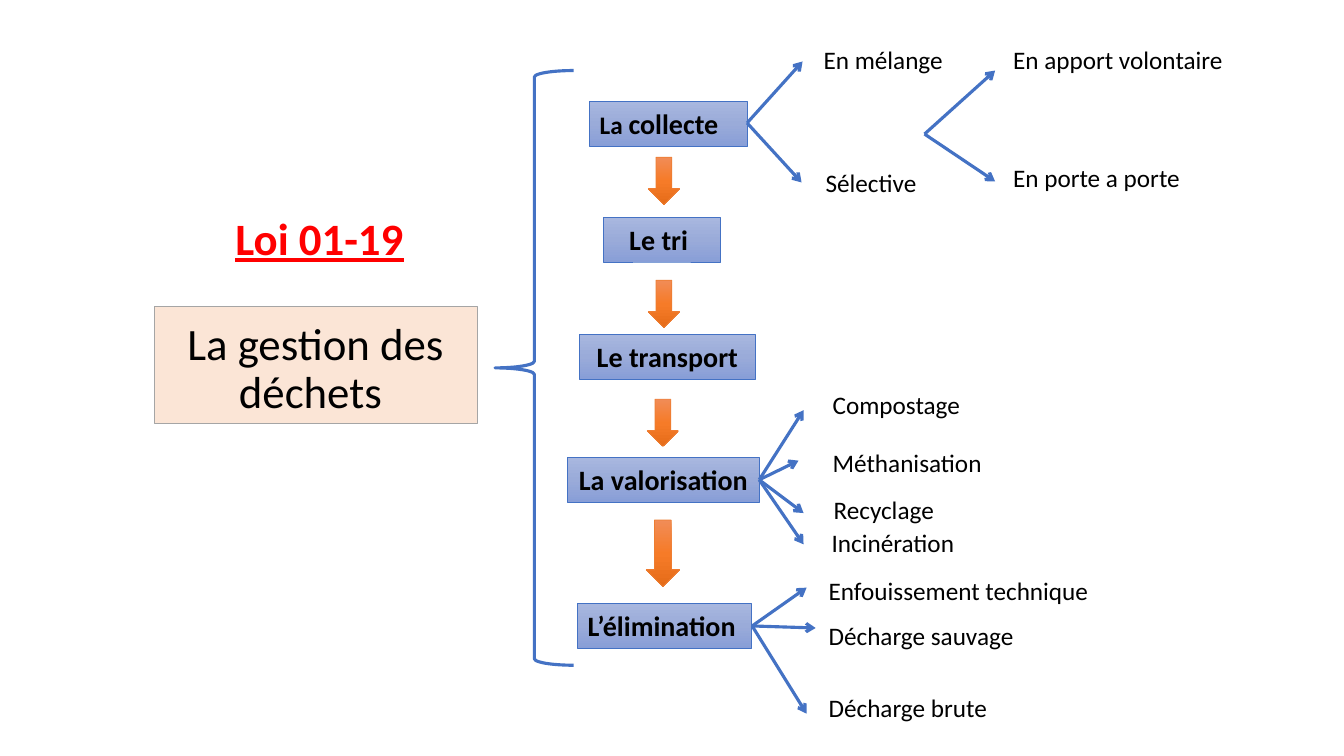
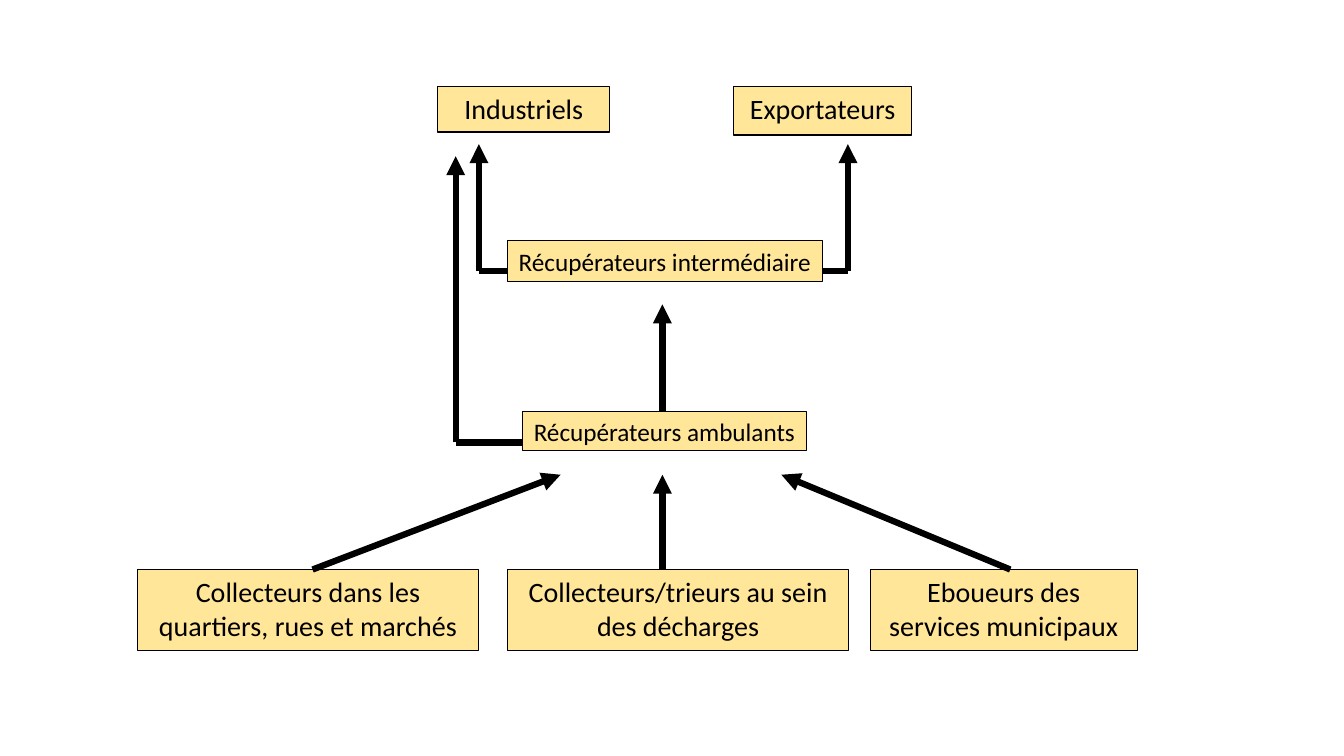
from copy import deepcopy
from lxml import etree
from pptx import Presentation
from pptx import util as u
from pptx.dml.color import RGBColor
from pptx.enum import shapes, text
from pptx.oxml.ns import qn

PX = 9144
FONT = "Calibri"
HUES = {"ink": "000000", "red": "FF0000", "peach": "FBE5D6", "gray": "A5A5A5",
        "blue": "4472C4", "orange": "ED7D31", "sand": "FFE699"}
FADES = {"blue": ("A8B7DF", "9AABD9", "889ED7"),
         "orange": ("F18C57", "F67B28", "E56C19")}
KIND = shapes.MSO_SHAPE
LEFT, MID = text.PP_ALIGN.LEFT, text.PP_ALIGN.CENTER

TITLE = ("La gestion des déchets ", (153, 304, 320, 116))
LAW = ("Loi 01-19", (157, 204, 320, 64))
BRACE = (491, 70, 78, 590)
STAGES = [
    ([("La ", 18), ("collecte", 20)], (585, 101, 156, 44), LEFT),
    ([("Le tri ", 20)], (598, 216, 117, 44), MID),
    ([("Le transport", 20)], (575, 332, 174, 44), MID),
    ([("La valorisation ", 20)], (563, 454, 190, 44), MID),
    ([("L’élimination", 20)], (573, 599, 172, 44), LEFT),
]
STEPS = [(643, 156, 31, 47), (643, 278, 31, 47), (642, 396, 31, 47), (641, 516, 33, 66)]
FANS = [
    ((741, 122), [("En mélange", (807, 39), (796, 61)),
                  ("Sélective", (809, 161), (795, 181))]),
    ((917, 133), [("En apport volontaire", (995, 39), (987, 70)),
                  ("En porte a porte", (995, 156), (987, 180))]),
    ((753, 476), [("Compostage", (816, 381), (797, 407)),
                  ("Méthanisation", (816, 439), (792, 457)),
                  ("Recyclage", (817, 486), (797, 509)),
                  ("Incinération", (815, 518), (797, 540))]),
    ((746, 621), [("Enfouissement technique", (812, 566), (800, 583)),
                  ("Décharge sauvage", (812, 611), (809, 623)),
                  ("Décharge brute", (812, 682), (800, 708))]),
]

ACTORS = [
    ("Industriels", 20, (434, 86, 171, 45)),
    ("Exportateurs", 20, (728, 86, 176, 48)),
    ("Récupérateurs intermédiaire", 18, (503, 239, 313, 40)),
    ("Récupérateurs ambulants", 18, (518, 408, 282, 39)),
    ("Collecteurs dans les quartiers, rues et marchés", 20, (136, 565, 339, 80)),
    ("Collecteurs/trieurs au sein des décharges", 20, (503, 565, 339, 80)),
    ("Eboueurs des services municipaux", 20, (863, 565, 265, 80)),
]
ROUTES = [
    [(503, 269), (475, 269), (475, 143)],
    [(815, 269), (841, 269), (841, 143)],
    [(518, 439), (452, 439), (452, 155)],
    [(657, 408), (657, 302)],
    [(310, 565), (556, 471)],
    [(657, 565), (657, 471)],
    [(1002, 565), (775, 471)],
]


def emu(nums):
    return [n * PX for n in nums]


def rgb(code):
    return RGBColor.from_string(code)


def edge(item, hue, width):
    item.line.color.rgb = rgb(HUES[hue])
    item.line.width = u.Pt(width)


def write(item, runs, align=LEFT, bold=False, hue="ink"):
    frame = item.text_frame
    frame.word_wrap = True
    frame.auto_size = text.MSO_AUTO_SIZE.NONE
    frame.vertical_anchor = text.MSO_ANCHOR.TOP
    para = frame.paragraphs[0]
    para.alignment = align
    font = para.font
    font.name, font.bold, font.color.rgb = FONT, bold, rgb(HUES[hue])
    font.size = u.Pt(runs[0][1])
    for words, size in runs:
        run = para.add_run()
        run.text = words
        if len(runs) > 1:
            run.font.size = u.Pt(size)
    return para


def shape(slide, kind, box, hue, width):
    item = slide.shapes.add_shape(kind, *emu(box))
    item.shadow.inherit = False
    edge(item, hue, width)
    return item


def solid(item, hue):
    item.fill.solid()
    item.fill.fore_color.rgb = rgb(HUES[hue])


def fade(item, hue):
    fill = item.fill
    fill.gradient()
    fill.gradient_angle = 270
    row = item._element.spPr.xpath(".//a:gsLst")[0]
    row.insert(1, deepcopy(row[0]))
    for stop, code, pos in zip(fill.gradient_stops, FADES[hue], (0, 0.5, 1)):
        stop.color.rgb = rgb(code)
        stop.position = pos


def label(slide, words, box, size=18, **look):
    return write(slide.shapes.add_textbox(*emu(box)), [(words, size)], **look)


def link(slide, start, end, hue, width, tip=None):
    line = slide.shapes.add_connector(shapes.MSO_CONNECTOR.STRAIGHT, *emu(start + end))
    edge(line, hue, width)
    if tip:
        etree.SubElement(line.line._get_or_add_ln(), qn("a:tailEnd"), type=tip)
    etree.SubElement(line._element.spPr, qn("a:effectLst"))


def waste(deck):
    slide = deck.slides.add_slide(deck.slide_layouts[5])
    title = slide.shapes.title
    words, box = TITLE
    title.left, title.top, title.width, title.height = emu(box)
    solid(title, "peach")
    edge(title, "gray", 0.5)
    write(title, [(words, 32)], MID).line_spacing = 0.9
    title.text_frame.vertical_anchor = text.MSO_ANCHOR.BOTTOM
    label(slide, *LAW, size=32, align=MID, bold=True, hue="red").font.underline = True
    shape(slide, KIND.LEFT_BRACE, BRACE, "blue", 2.25).fill.background()
    for runs, box, align in STAGES:
        stage = shape(slide, KIND.RECTANGLE, box, "blue", 0.5)
        fade(stage, "blue")
        write(stage, runs, align, True)
    for box in STEPS:
        fade(shape(slide, KIND.DOWN_ARROW, box, "orange", 0.5), "orange")
    for start, ends in FANS:
        for words, spot, end in ends:
            link(slide, start, end, "blue", 2.25, "arrow")
            label(slide, words, spot + (320, 40))


def chain(deck):
    slide = deck.slides.add_slide(deck.slide_layouts[6])
    for words, size, box in ACTORS:
        actor = shape(slide, KIND.RECTANGLE, box, "ink", 0.75)
        solid(actor, "sand")
        write(actor, [(words, size)], MID)
    for route in ROUTES:
        for start, end in zip(route, route[1:]):
            link(slide, start, end, "ink", 4.5, "triangle" if end == route[-1] else None)


def main():
    deck = Presentation()
    deck.slide_width, deck.slide_height = emu((1333, 750))
    waste(deck)
    chain(deck)
    deck.save("out.pptx")


if __name__ == "__main__":
    main()
